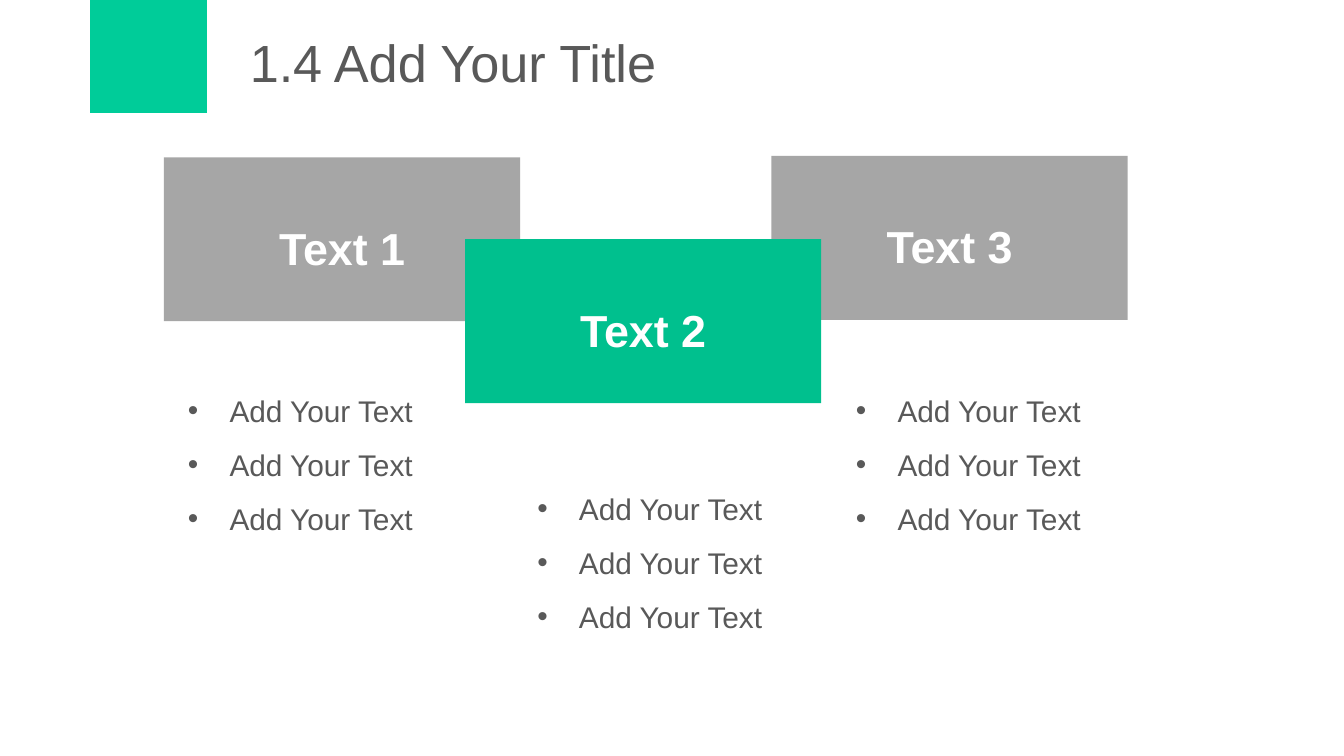
from dataclasses import dataclass

from lxml.etree import SubElement
from pptx import Presentation
from pptx.dml.color import RGBColor
from pptx.enum.shapes import MSO_SHAPE as Shape
from pptx.enum.text import MSO_ANCHOR as Anchor, PP_ALIGN as Align
from pptx.oxml.ns import qn
from pptx.util import Inches, Pt


@dataclass(frozen=True)
class Theme:
    font: str = "Arial"
    ink: str = "595959"
    white: str = "FFFFFF"
    corner: str = "00CC99"
    gray: str = "A6A6A6"
    green: str = "00C08E"
    title_size: int = 28
    card_size: int = 24
    list_size: int = 16


THEME = Theme()

# Grid of square cells, 100 columns wide, on a 16:9 slide
CELL = Inches(0.1)
COLUMNS = 100
ROWS = COLUMNS * 9 / 16
CARD_SIZE = (26.5, 12.2)
LIST_SIZE = (23.6, 13.1)
INDENT = Inches(0.31)

# Card label, fill, card corner, list corner; the green card lies on top
CARDS = [
    ("Text 1", THEME.gray, (12.2, 11.7), (13, 27.4)),
    ("Text 3", THEME.gray, (57.4, 11.6), (62.7, 27.4)),
    ("Text 2", THEME.green, (34.6, 17.8), (39, 34.7)),
]
LIST_ITEMS = ["Add Your Text"] * 3


def cells(*values):
    return [round(value * CELL) for value in values]


def apply(target, formats):
    for name, value in formats.items():
        setattr(target, name, value)


def write(shape, lines, size, color, bold=False, anchor=Anchor.TOP, **paragraph_format):
    frame = shape.text_frame
    apply(frame, {"word_wrap": True, "vertical_anchor": anchor})
    frame.text = "\n".join(lines)
    for paragraph in frame.paragraphs:
        apply(paragraph, paragraph_format)
        for run in paragraph.runs:
            apply(run.font, {"name": THEME.font, "size": Pt(size), "bold": bold})
            run.font.color.rgb = RGBColor.from_string(color)


def add_block(slide, corner, size, fill):
    shape = slide.shapes.add_shape(Shape.RECTANGLE, *cells(*corner, *size))
    shape.shadow.inherit = False
    shape.fill.solid()
    shape.fill.fore_color.rgb = RGBColor.from_string(fill)
    shape.line.fill.background()
    return shape


def add_title(slide, text):
    box = slide.shapes.add_textbox(*cells(17.6, 1.4, 78.9, 6.3))
    write(box, [text], THEME.title_size, THEME.ink, anchor=Anchor.MIDDLE)


def add_card(slide, label, fill, corner):
    card = add_block(slide, corner, CARD_SIZE, fill)
    write(card, [label], THEME.card_size, THEME.white, bold=True,
          anchor=Anchor.MIDDLE, alignment=Align.CENTER, line_spacing=1.3)


def add_bullet_list(slide, items, corner):
    box = slide.shapes.add_textbox(*cells(*corner, *LIST_SIZE))
    write(box, items, THEME.list_size, THEME.ink, line_spacing=1.5)
    for paragraph in box.text_frame.paragraphs:
        properties = paragraph._p.get_or_add_pPr()
        properties.set("marL", str(INDENT))
        properties.set("indent", str(-INDENT))
        SubElement(properties, qn("a:buFont")).set("typeface", THEME.font)
        SubElement(properties, qn("a:buChar")).set("char", "•")


def main():
    presentation = Presentation()
    width, height = cells(COLUMNS, ROWS)
    apply(presentation, {"slide_width": width, "slide_height": height})
    slide = presentation.slides.add_slide(presentation.slide_layouts[6])

    # Header
    add_block(slide, (6.7, 0), (8.7, 8.4), THEME.corner)
    add_title(slide, "1.4 Add Your Title")

    # Overlapping cards
    for label, fill, card_corner, _ in CARDS:
        add_card(slide, label, fill, card_corner)

    # Bullet lists under the cards
    for *_, list_corner in CARDS:
        add_bullet_list(slide, LIST_ITEMS, list_corner)

    presentation.save("out.pptx")


if __name__ == "__main__":
    main()
